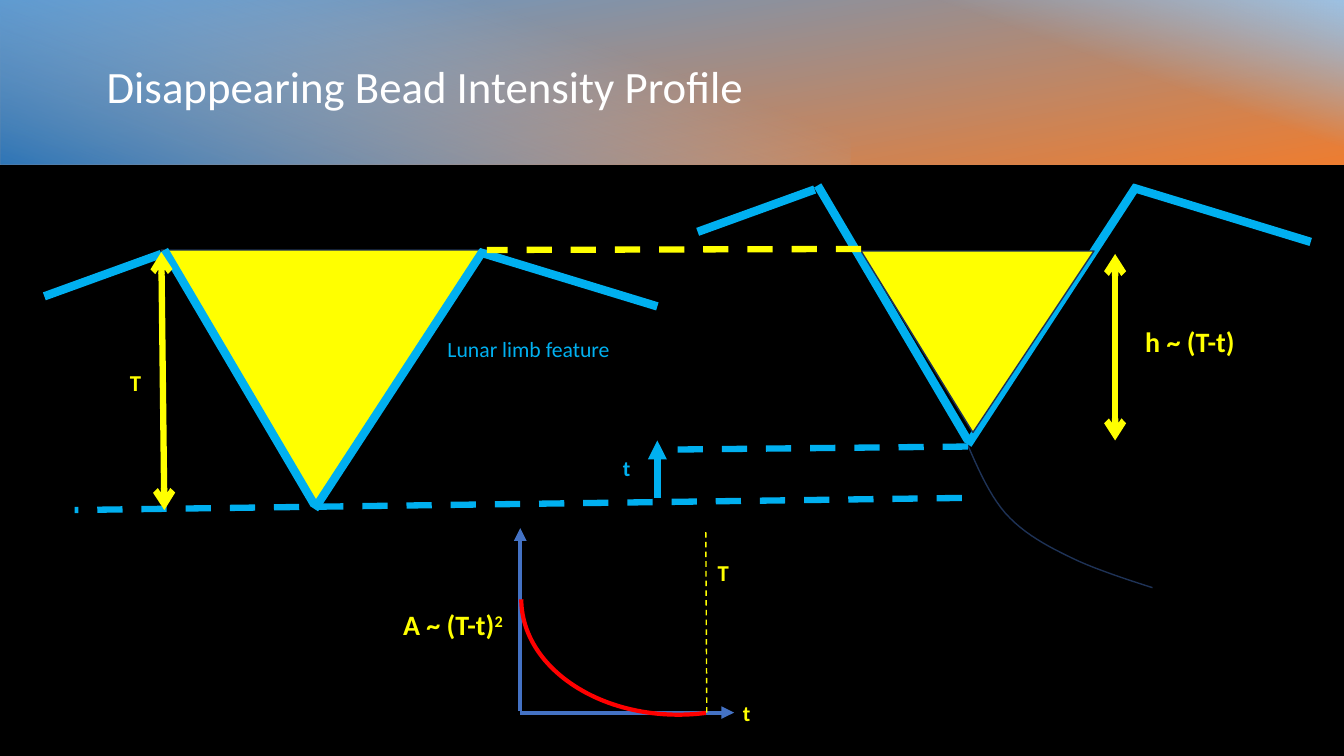
from lxml import etree
from pptx import Presentation
from pptx.dml.color import RGBColor
from pptx.enum.dml import MSO_LINE
from pptx.enum.shapes import MSO_CONNECTOR, MSO_SHAPE
from pptx.enum.text import MSO_ANCHOR, MSO_AUTO_SIZE
from pptx.oxml import parse_xml
from pptx.oxml.ns import nsdecls, qn
from pptx.util import Inches, Pt

RECT = MSO_SHAPE.RECTANGLE
TRIANGLE = MSO_SHAPE.ISOSCELES_TRIANGLE
ARC = MSO_SHAPE.ARC
STRAIGHT = MSO_CONNECTOR.STRAIGHT
DASH = MSO_LINE.DASH
MIDDLE = MSO_ANCHOR.MIDDLE
GROW = MSO_AUTO_SIZE.SHAPE_TO_FIT_TEXT

BLACK = RGBColor(0x00, 0x00, 0x00)
WHITE = RGBColor(0xFF, 0xFF, 0xFF)
YELLOW = RGBColor(0xFF, 0xFF, 0x00)
CYAN = RGBColor(0x00, 0xB0, 0xF0)
RED = RGBColor(0xFF, 0x00, 0x00)
NAVY = RGBColor(0x1E, 0x32, 0x56)
AXIS = RGBColor(0x44, 0x72, 0xC4)
SKY = RGBColor(0x5B, 0x9B, 0xD5)
PALE = RGBColor(0x9D, 0xC3, 0xE6)
DEEP = RGBColor(0x2E, 0x75, 0xB6)
ORANGE = RGBColor(0xED, 0x7D, 0x31)

FONT = "Calibri"
RAISE = "30000"

# Ends of the lunar limb lines, in drawing order
LIMB = [
    ((3.12, 5.05), (4.79, 2.49)),
    ((3.12, 5.01), (1.63, 2.48)),
    ((1.6, 2.52), (0.44, 2.94)),
    ((6.52, 3.04), (4.75, 2.5)),
]
# Start of the thin tail curve, then two handles and an end for each piece
TAIL = [
    (9.54, 4.28),
    (9.67, 4.58), (9.79, 4.88), (9.97, 5.09),
    (10.16, 5.3), (10.39, 5.42), (10.64, 5.54),
    (10.88, 5.66), (11.43, 5.83), (11.43, 5.83),
]


def add_form(shapes, kind, box, turn=0, fill=None, edge=None, width=1):
    shape = shapes.add_shape(kind, *map(Inches, box))
    shape.rotation = turn
    shape.shadow.inherit = False
    if fill is None:
        shape.fill.background()
    else:
        shape.fill.solid()
        shape.fill.fore_color.rgb = fill
    if edge is None:
        shape.line.fill.background()
    else:
        shape.line.color.rgb = edge
        shape.line.width = Pt(width)
    return shape


def add_blend(shapes, box, turn, angle, stops):
    """Rectangle with a gradient; each stop is place, colour, opacity in percent."""
    shape = add_form(shapes, RECT, box, turn, BLACK)
    marks = "".join(
        f'<a:gs pos="{place * 1000}"><a:srgbClr val="{color}">'
        f'<a:alpha val="{alpha * 1000}"/></a:srgbClr></a:gs>'
        for place, color, alpha in stops
    )
    blend = parse_xml(
        f'<a:gradFill {nsdecls("a")} rotWithShape="1"><a:gsLst>{marks}</a:gsLst>'
        f'<a:lin ang="{angle * 60000}" scaled="0"/></a:gradFill>'
    )
    props = shape._element.spPr
    props.replace(props.find(qn("a:solidFill")), blend)


def add_line(shapes, start, end, color, width, dash=None, head=None, tail=None):
    line = shapes.add_connector(STRAIGHT, *map(Inches, start + end))
    line.line.color.rgb = color
    line.line.width = Pt(width)
    if dash is not None:
        line.line.dash_style = dash
    props = line._element.spPr
    stroke = props.find(qn("a:ln"))
    for tag, kind in (("a:headEnd", head), ("a:tailEnd", tail)):
        if kind:
            etree.SubElement(stroke, qn(tag)).set("type", kind)
    etree.SubElement(props, qn("a:effectLst"))


def add_text(shapes, box, text, size, color, bold=True, power="", raised=False):
    frame = shapes.add_textbox(*map(Inches, box)).text_frame
    frame.word_wrap = True
    frame.auto_size = GROW
    para = frame.paragraphs[0]
    para.text = text
    para.space_after = Pt(6)
    if power:
        para.add_run().text = power
    for run in para.runs:
        run.font.name = FONT
        run.font.size = Pt(size)
        run.font.bold = bold
        run.font.color.rgb = color
    if power or raised:
        para.runs[-1]._r.get_or_add_rPr().set("baseline", RAISE)
    return frame


def add_limb(shapes, right=0, down=0):
    group = shapes.add_group_shape().shapes
    for ends in LIMB:
        start, end = [(x + right, y + down) for x, y in ends]
        add_line(group, start, end, CYAN, 6)


def add_bead(shapes, box):
    bead = add_form(shapes, TRIANGLE, box, 180, YELLOW, NAVY)
    bead.adjustments[0] = 0.52


def add_curve(shapes, knots, color, steps=12):
    points = []
    for first in range(0, len(knots) - 1, 3):
        piece = knots[first:first + 4]
        for step in range(1, steps + 1):
            t = step / steps
            parts = ((1 - t) ** 3, 3 * t * (1 - t) ** 2, 3 * t * t * (1 - t), t ** 3)
            points.append(tuple(
                Inches(sum(w * knot[axis] for w, knot in zip(parts, piece)))
                for axis in (0, 1)
            ))
    pen = shapes.build_freeform(*map(Inches, knots[0]))
    pen.add_line_segments(points, close=False)
    curve = pen.convert_to_shape()
    curve.shadow.inherit = False
    curve.fill.background()
    curve.line.color.rgb = color
    curve.line.width = Pt(1)


def add_banner(shapes):
    group = shapes.add_group_shape().shapes
    add_blend(group, (5.84, -5.87, 1.66, 13.34), 270, 170,
              [(0, SKY, 100), (100, ORANGE, 100)])
    add_blend(group, (9.75, -1.97, 1.65, 5.54), 270, 20,
              [(59, PALE, 0), (100, PALE, 100)])
    add_blend(group, (3.39, -3.42, 1.66, 8.44), 90, 20,
              [(29, PALE, 0), (100, DEEP, 100)])


def main():
    deck = Presentation()
    deck.slide_width, deck.slide_height = Inches(13.33), Inches(7.5)
    slide = deck.slides.add_slide(deck.slide_layouts[6])
    slide.background.fill.solid()
    slide.background.fill.fore_color.rgb = BLACK
    shapes = slide.shapes

    # Banner and title
    add_banner(shapes)
    title = add_text(shapes, (0.96, 0.33, 11.46, 1.1),
                     "Disappearing Bead Intensity Profile", 32, WHITE, bold=False)
    title.auto_size = MSO_AUTO_SIZE.NONE
    title.vertical_anchor = MIDDLE
    title.paragraphs[0].space_after = Pt(0)
    title.paragraphs[0].line_spacing = 0.9

    # Full bead on the left
    add_bead(shapes, (1.6, 2.48, 3.23, 2.56))
    add_limb(shapes)
    add_text(shapes, (4.34, 3.28, 2.3, 0.36), "Lunar limb feature", 15.5, CYAN, bold=False)

    # Shrunken bead on the right
    add_curve(shapes, TAIL, NAVY)
    add_limb(shapes, 6.48, -0.64)
    add_bead(shapes, (8.54, 2.49, 2.31, 1.8))

    # Level lines
    add_line(shapes, (8.54, 2.47), (4.83, 2.48), YELLOW, 4.5, DASH)
    add_line(shapes, (9.54, 4.94), (0.74, 5.06), CYAN, 4.5, DASH)
    add_line(shapes, (9.6, 4.43), (6.68, 4.46), CYAN, 4.5, DASH)

    # Height arrows and their labels
    add_line(shapes, (1.6, 2.5), (1.63, 5.06), YELLOW, 4.5, head="arrow", tail="arrow")
    add_line(shapes, (11.06, 2.52), (11.06, 4.37), YELLOW, 4.5, head="arrow", tail="arrow")
    add_line(shapes, (6.52, 4.94), (6.52, 4.37), CYAN, 4.5, tail="triangle")
    add_text(shapes, (1.19, 3.56, 0.38, 0.42), "T", 28, YELLOW, raised=True)
    add_text(shapes, (11.26, 3.17, 1.47, 0.44), "h ~ (T-t)", 20, YELLOW)
    add_text(shapes, (6.08, 4.46, 0.38, 0.36), "t", 15.5, CYAN)

    # Intensity graph
    add_line(shapes, (5.16, 5.24), (5.16, 7.05), AXIS, 3, head="triangle")
    add_line(shapes, (5.16, 7.07), (7.28, 7.07), AXIS, 3, tail="triangle")
    decay = add_form(shapes, ARC, (5.17, 4.8, 3.11, 2.29), 180, edge=RED, width=3)
    decay.adjustments[0], decay.adjustments[1] = 153.74, 0
    add_line(shapes, (7.01, 7.07), (7, 5.24), YELLOW, 1, DASH)
    add_text(shapes, (3.9, 5.98, 1.7, 0.44), "A ~ (T-t)", 20, YELLOW, power="2")
    add_text(shapes, (7.27, 6.89, 0.38, 0.36), "t", 15.5, YELLOW)
    add_text(shapes, (7.02, 5.45, 0.38, 0.42), "T", 28, YELLOW, raised=True)

    deck.save("out.pptx")


if __name__ == "__main__":
    main()
